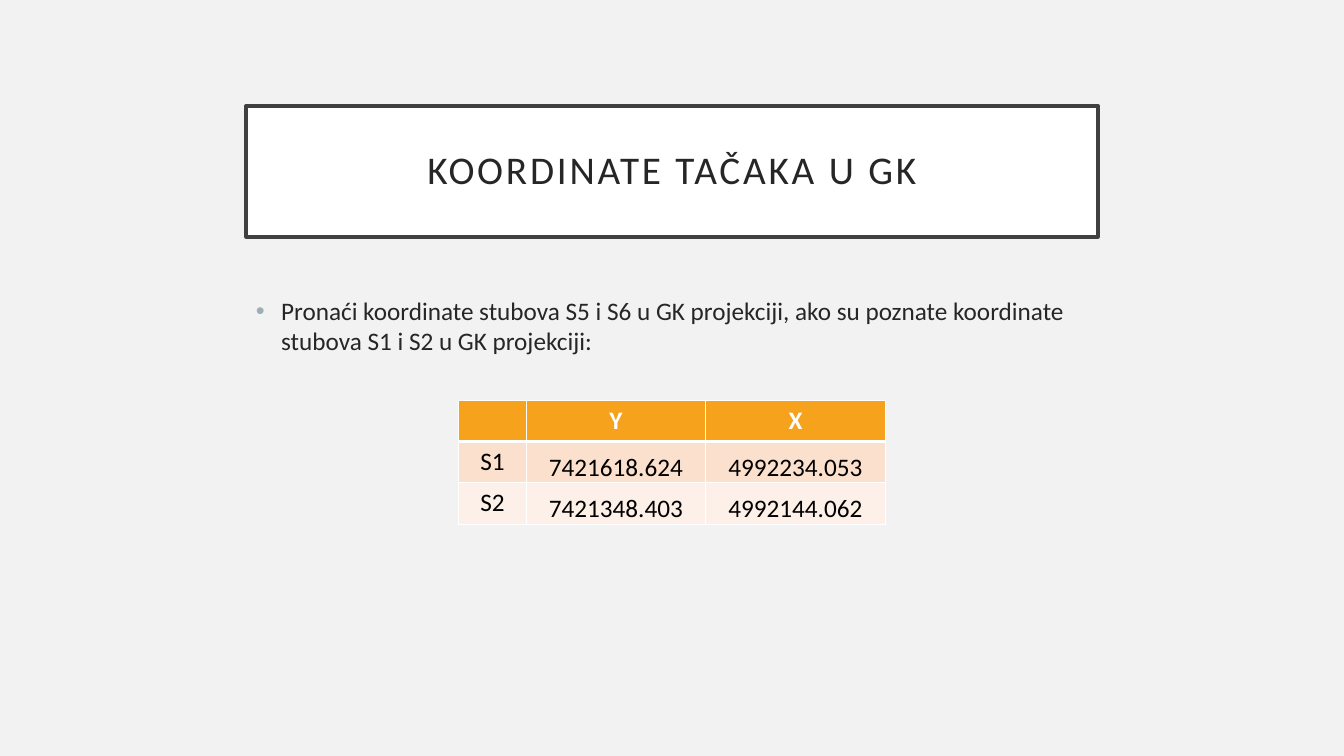
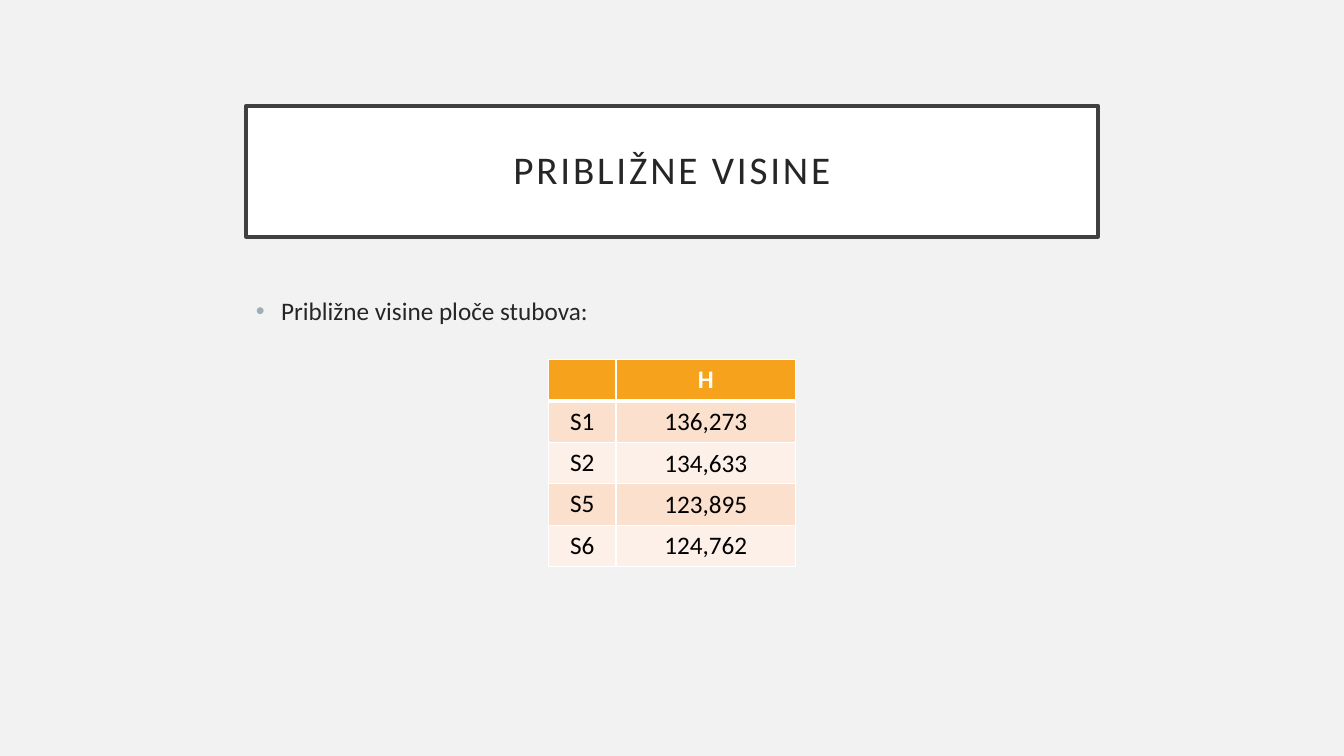
"""Build two slides with tables of pillar coordinates and heights."""
from dataclasses import dataclass

from lxml.etree import SubElement
from pptx import Presentation
from pptx.dml.color import RGBColor
from pptx.enum.text import MSO_ANCHOR, MSO_AUTO_SIZE, PP_ALIGN
from pptx.oxml.ns import qn
from pptx.util import Inches, Pt


@dataclass(frozen=True)
class Theme:
    """Colours, type sizes and line widths shared by the slides."""

    font: str = "Calibri"
    background: str = "F2F2F2"
    white: str = "FFFFFF"
    frame: str = "404040"
    ink: str = "262626"
    black: str = "000000"
    bullet: str = "9BAFB5"
    header: str = "F6A21D"
    bands: tuple = ("FBE0CD", "FDF0E8")
    title_size: int = 28
    body_size: int = 18
    frame_width: float = 2.5
    thin_border: int = 1
    thick_border: int = 3


THEME = Theme()
SLIDE_WIDTH, SLIDE_HEIGHT = 13.33, 7.5
TITLE_BOX = (2.44, 1.05, 8.45, 1.3)
BODY_BOX = (2.44, 2.88, 8.45, 3.39)
LABEL_WIDTH, VALUE_WIDTH, ROW_HEIGHT = 0.67, 1.78, 0.41

SLIDES = (
    {
        "title": "KOORDINATE TAČAKA U GK",
        "body": "Pronaći koordinate stubova S5 i S6 u GK projekciji, "
                "ako su poznate koordinate stubova S1 i S2 u GK projekciji:",
        "table_top": 3.97,
        "value_anchor": MSO_ANCHOR.BOTTOM,
        "rows": (
            ("", "Y", "X"),
            ("S1", "7421618.624", "4992234.053"),
            ("S2", "7421348.403", "4992144.062"),
        ),
    },
    {
        "title": "PRIBLIŽNE VISINE",
        "body": "Približne visine ploče stubova:",
        "table_top": 3.57,
        "value_anchor": MSO_ANCHOR.MIDDLE,
        "rows": (
            ("", "H"),
            ("S1", "136,273"),
            ("S2", "134,633"),
            ("S5", "123,895"),
            ("S6", "124,762"),
        ),
    },
)


def set_attributes(target, values):
    """Set each named format value on the target."""
    for name, value in values.items():
        setattr(target, name, value)


def set_fill(fill, color):
    """Give a fill one solid colour."""
    fill.solid()
    fill.fore_color.rgb = RGBColor.from_string(color)


def write_text(paragraph, text, size, color, bold=False):
    """Add one formatted run to a paragraph and return it."""
    run = paragraph.add_run()
    run.text = text
    set_attributes(run.font, {"name": THEME.font, "size": Pt(size), "bold": bold})
    run.font.color.rgb = RGBColor.from_string(color)
    return run


def add_title(slide, text):
    """Place the framed title."""
    title = slide.shapes.title
    position = map(Inches, TITLE_BOX)
    set_attributes(title, dict(zip(("left", "top", "width", "height"), position)))
    set_fill(title.fill, THEME.white)
    set_fill(title.line.fill, THEME.frame)
    title.line.width = Pt(THEME.frame_width)
    frame = title.text_frame
    margins = ("margin_left", "margin_top", "margin_right", "margin_bottom")
    set_attributes(frame, dict.fromkeys(margins, Inches(0.2)))
    set_attributes(frame, {
        "word_wrap": True,
        "auto_size": MSO_AUTO_SIZE.NONE,
        "vertical_anchor": MSO_ANCHOR.MIDDLE,
    })
    paragraph = frame.paragraphs[0]
    set_attributes(paragraph, {"alignment": PP_ALIGN.CENTER, "line_spacing": 0.9})
    run = write_text(paragraph, text, THEME.title_size, THEME.ink)
    run.font._element.set("spc", "200")


def add_bullet_text(slide, text):
    """Place the bulleted statement under the title."""
    frame = slide.shapes.add_textbox(*map(Inches, BODY_BOX)).text_frame
    frame.word_wrap = True
    paragraph = frame.paragraphs[0]
    paragraph.space_before = Pt(10)
    properties = paragraph._p.get_or_add_pPr()
    properties.set("marL", str(Inches(0.25)))
    properties.set("indent", str(-Inches(0.25)))
    color = SubElement(properties, qn("a:buClr"))
    SubElement(color, qn("a:srgbClr"), val=THEME.bullet)
    SubElement(properties, qn("a:buFont"), typeface="Arial")
    SubElement(properties, qn("a:buChar"), char="•")
    write_text(paragraph, text, THEME.body_size, THEME.ink)


def add_borders(cell, row_index):
    """Draw white cell borders, heavier under the header row."""
    properties = cell._tc.get_or_add_tcPr()
    heavy_side = {0: "lnB", 1: "lnT"}.get(row_index)
    for side in ("lnL", "lnR", "lnT", "lnB"):
        width = THEME.thick_border if side == heavy_side else THEME.thin_border
        line = SubElement(properties, qn(f"a:{side}"), w=str(Pt(width)))
        fill = SubElement(line, qn("a:solidFill"))
        SubElement(fill, qn("a:srgbClr"), val=THEME.white)


def format_cell(cell, text, row_index, is_value, value_anchor):
    """Style and fill in one table cell."""
    is_header = row_index == 0
    add_borders(cell, row_index)
    set_fill(cell.fill, THEME.header if is_header else THEME.bands[(row_index - 1) % 2])
    if is_value and not is_header:
        set_attributes(cell, {
            "margin_left": Inches(0.01),
            "margin_top": Inches(0.01),
            "margin_right": Inches(0.01),
            "margin_bottom": 0,
            "vertical_anchor": value_anchor,
        })
    if text:
        paragraph = cell.text_frame.paragraphs[0]
        paragraph.alignment = PP_ALIGN.CENTER
        color = THEME.white if is_header else THEME.black
        write_text(paragraph, text, THEME.body_size, color, is_header)


def add_pillar_table(slide, rows, top, value_anchor):
    """Place a horizontally centred table of pillar values."""
    widths = [LABEL_WIDTH] + [VALUE_WIDTH] * (len(rows[0]) - 1)
    width = sum(widths)
    left = (SLIDE_WIDTH - width) / 2
    box = (left, top, width, ROW_HEIGHT * len(rows))
    table = slide.shapes.add_table(len(rows), len(widths), *map(Inches, box)).table
    for column, column_width in zip(table.columns, widths):
        column.width = Inches(column_width)
    for row_index, row in enumerate(rows):
        table.rows[row_index].height = Inches(ROW_HEIGHT)
        for column_index, text in enumerate(row):
            cell = table.cell(row_index, column_index)
            format_cell(cell, text, row_index, column_index > 0, value_anchor)


def main():
    """Build and save the presentation."""
    presentation = Presentation()
    presentation.slide_width = Inches(SLIDE_WIDTH)
    presentation.slide_height = Inches(SLIDE_HEIGHT)
    set_fill(presentation.slide_master.background.fill, THEME.background)
    title_only = presentation.slide_layouts.get_by_name("Title Only")
    for content in SLIDES:
        slide = presentation.slides.add_slide(title_only)
        add_title(slide, content["title"])
        add_bullet_text(slide, content["body"])
        add_pillar_table(slide, content["rows"], content["table_top"], content["value_anchor"])
    presentation.save("out.pptx")


if __name__ == "__main__":
    main()
